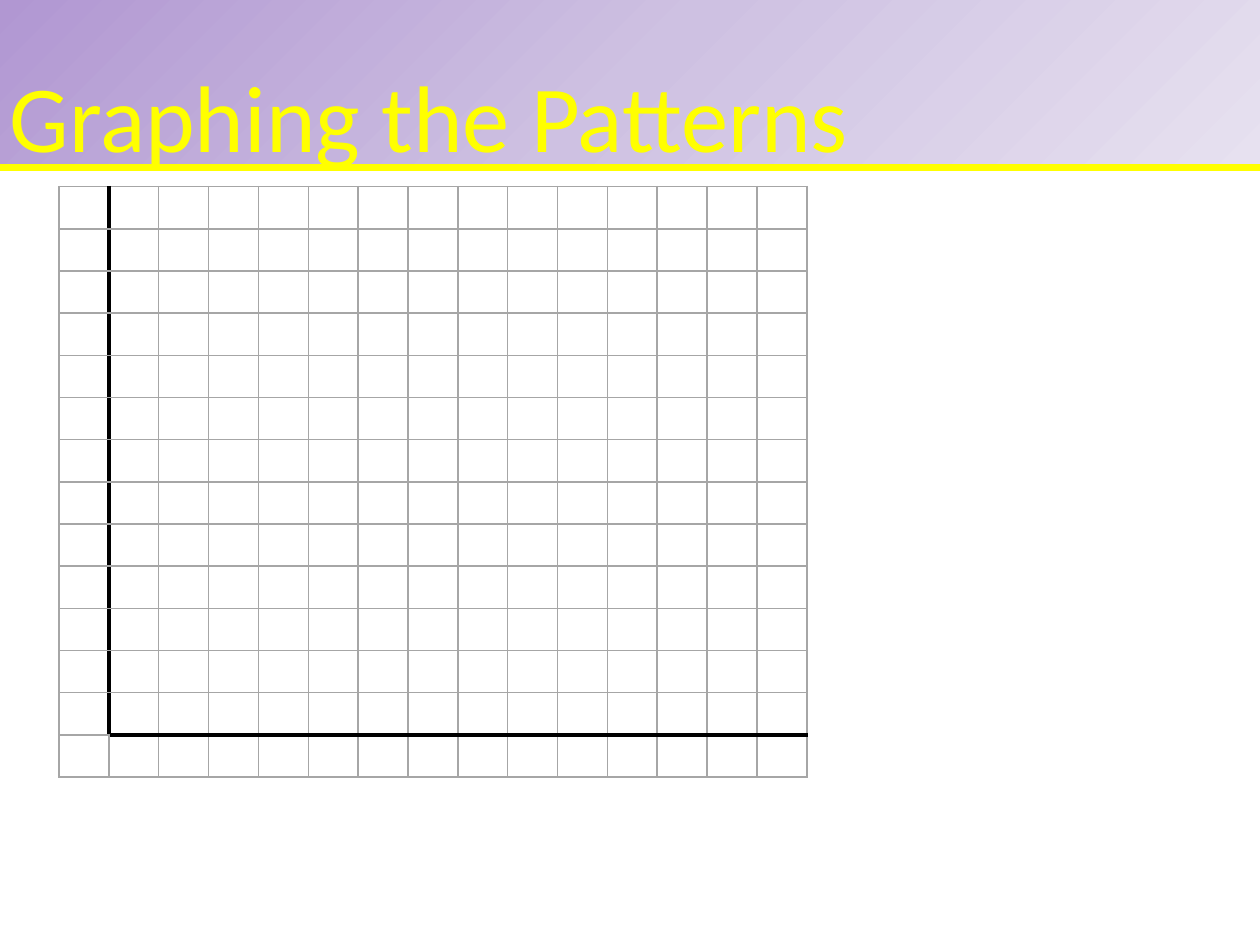
from copy import deepcopy

from lxml.etree import SubElement
from pptx import Presentation
from pptx.dml.color import RGBColor
from pptx.enum.shapes import MSO_CONNECTOR, MSO_SHAPE
from pptx.enum.text import MSO_ANCHOR, PP_ALIGN
from pptx.oxml.ns import qn
from pptx.util import Pt

YELLOW = RGBColor(0xFF, 0xFF, 0x00)
GRID_GRAY = RGBColor(0xA6, 0xA6, 0xA6)
AXIS_BLACK = RGBColor(0x00, 0x00, 0x00)
BANNER_STOPS = (
    (0, RGBColor(0xB1, 0x97, 0xD2)),
    (0.5, RGBColor(0xCE, 0xC1, 0xE2)),
    (1, RGBColor(0xE7, 0xE1, 0xF0)),
)

SLIDE_WIDTH, SLIDE_HEIGHT = 720, 540
BANNER_HEIGHT = 95.76
ROWS, COLUMNS = 14, 15
GRID_LEFT, GRID_TOP = 33.7, 106.7
CELL_WIDTH, CELL_HEIGHT = 28.5, 24.12
AXIS_COLUMN = 1         # the vertical axis is the left edge of this column
AXIS_ROW = ROWS - 1     # the horizontal axis is the top edge of this row


def fill_gradient(fill, color_stops):
    fill.gradient()
    fill.gradient_angle = 315
    first = fill.gradient_stops[0]._gs
    stop_list = first.getparent()
    stop_list.remove(stop_list[-1])
    while len(stop_list) < len(color_stops):
        stop_list.append(deepcopy(first))
    for stop, (position, color) in zip(fill.gradient_stops, color_stops):
        stop.position = position
        stop.color.rgb = color


def add_banner(slide, title):
    banner = slide.shapes.add_shape(
        MSO_SHAPE.RECTANGLE, 0, 0, Pt(SLIDE_WIDTH), Pt(BANNER_HEIGHT))
    banner.shadow.inherit = False
    banner.line.fill.background()
    fill_gradient(banner.fill, BANNER_STOPS)

    frame = banner.text_frame
    frame.word_wrap = True
    frame.vertical_anchor = MSO_ANCHOR.TOP
    frame.margin_left, frame.margin_top = Pt(5.5), Pt(32.9)
    frame.margin_bottom = 0
    paragraph = frame.paragraphs[0]
    paragraph.alignment = PP_ALIGN.LEFT
    run = paragraph.add_run()
    run.text = title
    run.font.name = "Calibri"
    run.font.size = Pt(54)
    run.font.color.rgb = YELLOW


def add_rule(slide):
    rule = slide.shapes.add_connector(
        MSO_CONNECTOR.STRAIGHT,
        0, Pt(BANNER_HEIGHT), Pt(SLIDE_WIDTH), Pt(BANNER_HEIGHT))
    rule.line.color.rgb = YELLOW
    rule.line.width = Pt(4)
    SubElement(rule._element.spPr, qn("a:effectLst"))


def set_border(cell, side, is_axis):
    width, color = (3, AXIS_BLACK) if is_axis else (1, GRID_GRAY)
    border = SubElement(cell._tc.get_or_add_tcPr(), qn(f"a:ln{side}"),
                        w=str(Pt(width)))
    solid = SubElement(border, qn("a:solidFill"))
    SubElement(solid, qn("a:srgbClr"), val=str(color))


def add_graph_grid(slide):
    grid = slide.shapes.add_table(
        ROWS, COLUMNS, Pt(GRID_LEFT), Pt(GRID_TOP),
        Pt(COLUMNS * CELL_WIDTH), Pt(ROWS * CELL_HEIGHT)).table
    grid.first_row = grid.horz_banding = False
    for column in grid.columns:
        column.width = Pt(CELL_WIDTH)
    for row in grid.rows:
        row.height = Pt(CELL_HEIGHT)

    for r in range(ROWS):
        for c in range(COLUMNS):
            cell = grid.cell(r, c)
            cell.margin_top = cell.margin_bottom = 0
            above_axis, right_of_axis = r < AXIS_ROW, c >= AXIS_COLUMN
            # Borders come before the fill in the cell properties
            set_border(cell, "L", above_axis and c == AXIS_COLUMN)
            set_border(cell, "R", above_axis and c == AXIS_COLUMN - 1)
            set_border(cell, "T", right_of_axis and r == AXIS_ROW)
            set_border(cell, "B", right_of_axis and r == AXIS_ROW - 1)
            cell.fill.background()


def main():
    deck = Presentation()
    deck.slide_width, deck.slide_height = Pt(SLIDE_WIDTH), Pt(SLIDE_HEIGHT)
    slide = deck.slides.add_slide(deck.slide_layouts[6])

    # Title banner and the rule under it
    add_banner(slide, "Graphing the Patterns")
    add_rule(slide)

    # Empty coordinate grid with two heavy axes
    add_graph_grid(slide)

    deck.save("out.pptx")


if __name__ == "__main__":
    main()
